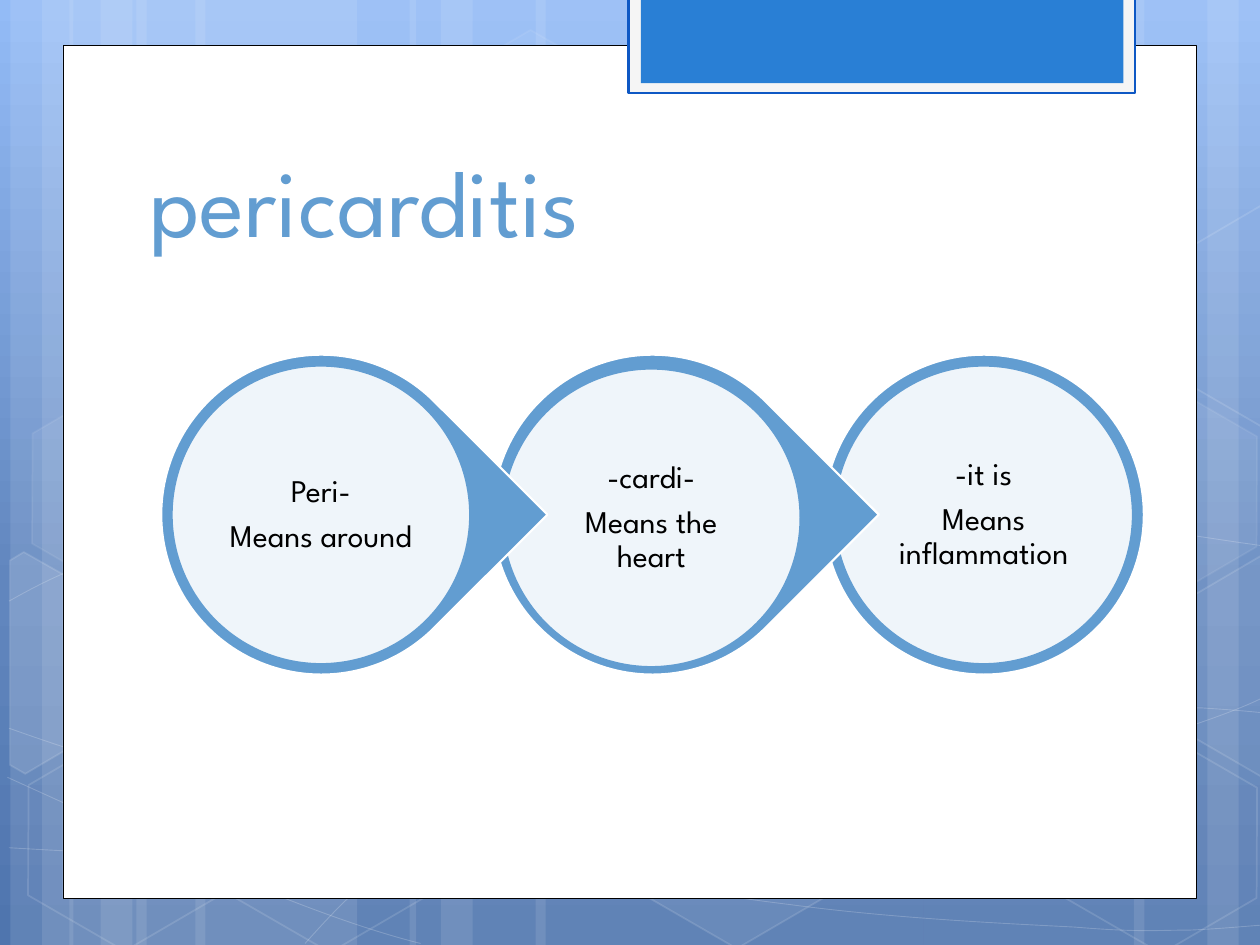
from copy import deepcopy

from lxml import etree
from pptx import Presentation
from pptx.dml.color import RGBColor
from pptx.enum.shapes import MSO_SHAPE
from pptx.enum.text import MSO_ANCHOR, PP_ALIGN
from pptx.oxml.ns import qn
from pptx.util import Cm, Pt

RECT, OVAL = MSO_SHAPE.RECTANGLE, MSO_SHAPE.OVAL
HEXAGON, DROP = MSO_SHAPE.HEXAGON, MSO_SHAPE.TEAR
MIDDLE, BOTTOM = MSO_ANCHOR.MIDDLE, MSO_ANCHOR.BOTTOM
LEFT, CENTER = PP_ALIGN.LEFT, PP_ALIGN.CENTER


class Theme:
    font = "League Spartan"
    title, body = 54, 18
    white, black, accent = "FFFFFF", "000000", "629DD1"
    tab, edge, rim = "297FD5", "0E58C4", "F5F5F5"
    sky = [(0, "93BBF6"), (0.62, "6186BE"), (1, "4F75AE")]


# All lengths are in cm.
WIDE, HIGH = 25.4, 19.05
TITLE = "pericarditis"
# Word part, meaning, offset of the pale disc inside its ring
PARTS = [
    ("Peri-", "Means around", (0.21, 0.22)),
    ("-cardi-", "Means the heart", (0.19, 0.28)),
    ("-it is", "Means inflammation", (0.21, 0.22)),
]
RING, DISC, LABEL = 6.45, 6.02, 4.32
START, STEP, TOP = 3.25, 6.68, 7.15

# Left, width
STRIPES = [
    (2.75, 4.45), (0.21, 1.27), (0.85, 2.11), (3.94, 4.45), (1.4, 1.27),
    (2.03, 2.11), (18.62, 4.45), (24.34, 1.27), (22.86, 2.11),
    (10.8, 7.82), (8.26, 1.27), (8.89, 2.11),
]
# Chains of cubic curves: a start, then two controls and an end each
CURVES = [
    [(0.18, 17.09), (1.55, 17.17), (2.92, 17.25), (4.83, 17.22),
     (6.73, 17.2), (9.09, 17.15), (11.63, 16.89), (14.17, 16.64),
     (17.78, 16.15), (20.12, 15.67), (22.43, 15.19), (24.82, 14.43),
     (25.58, 14)],
    [(0.18, 12.12), (0.91, 11.71), (1.65, 11.33), (3.07, 10.95),
     (4.52, 10.57), (6.58, 10.01), (8.81, 9.83), (11.07, 9.65),
     (13.82, 9.63), (16.61, 9.83), (19.41, 10.03), (24.05, 10.82),
     (25.58, 11.02)],
    [(0.15, 15.67), (3.23, 17.07), (6.27, 18.47), (8.48, 19.02)],
    [(0.18, 14.68), (0.97, 14.96), (1.78, 15.24), (3.25, 15.65),
     (4.72, 16.03), (6.93, 16.66), (9.07, 17.09), (11.18, 17.53),
     (13.84, 17.98), (15.95, 18.24), (18.06, 18.52), (20.32, 18.62),
     (21.67, 18.69), (22.99, 18.8), (23.34, 18.75), (24, 18.75),
     (24.66, 18.72), (25.12, 18.67), (25.58, 18.64)],
    [(6.15, 19.02), (6.6, 18.52), (7.06, 18.01), (7.67, 17.55),
     (8.28, 17.09), (9.14, 16.59), (9.86, 16.23), (10.57, 15.88),
     (11, 15.72), (11.94, 15.47), (12.85, 15.22), (14.55, 14.86),
     (15.44, 14.68), (16.36, 14.5), (16.48, 14.5), (17.27, 14.45),
     (18.06, 14.38), (19.3, 14.3), (20.17, 14.27), (21.06, 14.25),
     (22.5, 14.27), (22.5, 14.27), (23, 14.27), (23.7, 14.27),
     (24.21, 14.27), (24.66, 14.3), (25.1, 14.33), (25.55, 14.38)],
]
# Left, top, opacity of fill, opacity of line
CELLS = [
    (8.48, 0.91, 4, 8), (12.62, 14.96, 6, 12), (0.28, 15.01, 0, 12),
    (0.36, 7.92, 7, 8), (4.42, 15.04, 0, 12), (19.13, 11.51, 10, 12),
    (21.18, 15.06, 0, 12), (21.18, 7.98, 7, 8),
]
# Opacity of fill, outline of a cell cut by the slide edge
CUTS = [
    (10, [(0.2, 11.3), (0.48, 11.13), (2.44, 12.24), (2.41, 14.48),
          (0.51, 15.6), (0.2, 15.42)]),
    (4, [(23.52, 12.32), (25.43, 11.2), (25.63, 11.33), (25.63, 15.57),
         (25.45, 15.67), (23.52, 14.55)]),
    (0, [(23.52, 5.26), (25.43, 4.14), (25.65, 4.27), (25.63, 8.51),
         (25.45, 8.61), (23.52, 7.49)]),
]

deck = Presentation()
deck.slide_width, deck.slide_height = Cm(WIDE), Cm(HIGH)
slide = deck.slides.add_slide(deck.slide_layouts[6])
shapes = slide.shapes


def tint(fill, color, alpha):
    """Make a fill solid, with opacity in percent."""
    fill.solid()
    fill.fore_color.rgb = RGBColor.from_string(color)
    if alpha < 100:
        node = fill._xPr.find(qn("a:solidFill"))[0]
        etree.SubElement(node, qn("a:alpha"), val=str(alpha * 1000))


def style(shape, fill=None, alpha=100, line=None, width=1, glow=100):
    """Set fill and line; glow is the opacity of the line."""
    shape.shadow.inherit = False
    if fill and alpha:
        tint(shape.fill, fill, alpha)
    else:
        shape.fill.background()
    if line:
        shape.line.width = Pt(width)
        tint(shape.line.fill, line, glow)
    else:
        shape.line.fill.background()
    return shape


def draw(kind, x, y, w, h, **look):
    return style(shapes.add_shape(kind, Cm(x), Cm(y), Cm(w), Cm(h)), **look)


def trace(dots, close, **look):
    pen = [(Cm(x), Cm(y)) for x, y in dots]
    path = shapes.build_freeform(*pen[0])
    path.add_line_segments(pen[1:], close=close)
    return style(path.convert_to_shape(), **look)


def bend(shape):
    """Turn each three line segments of a freeform into one cubic curve."""
    lines = list(shape._element.iter(qn("a:lnTo")))
    for i in range(0, len(lines), 3):
        curve = etree.Element(qn("a:cubicBezTo"))
        lines[i].addprevious(curve)
        for line in lines[i:i + 3]:
            curve.append(line[0])
            line.getparent().remove(line)


def write(lines, x, y, w, h, size=Theme.body, color=Theme.black, align=CENTER,
          anchor=MIDDLE, pad=(0.08, 0.08), space=0.9, after=6.3):
    frame = shapes.add_textbox(Cm(x), Cm(y), Cm(w), Cm(h)).text_frame
    frame.word_wrap = True
    frame.vertical_anchor = anchor
    frame.margin_left = frame.margin_right = Cm(pad[0])
    frame.margin_top = frame.margin_bottom = Cm(pad[1])
    for i, line in enumerate(lines):
        para = frame.add_paragraph() if i else frame.paragraphs[0]
        para.alignment, para.line_spacing = align, space
        para.space_after = Pt(after)
        run = para.add_run()
        run.text = line
        run.font.name, run.font.size = Theme.font, Pt(size)
        run.font.color.rgb = RGBColor.from_string(color)


# Backdrop
back = slide.background.fill
back.gradient()
back.gradient_angle = 270
stops = slide.element.find(".//" + qn("a:gsLst"))
stops.append(deepcopy(stops[-1]))
for stop, (place, color) in zip(back.gradient_stops, Theme.sky):
    stop.position = place
    stop.color.rgb = RGBColor.from_string(color)

for x, w in STRIPES:
    draw(RECT, x, 0, w, HIGH, fill=Theme.white, alpha=10)
for dots in CURVES:
    bend(trace(dots, False, line=Theme.white, width=0.5, glow=20))
for x, y, alpha, glow in CELLS:
    cell = draw(HEXAGON, x, y, 4.45, 3.86, fill=Theme.white, alpha=alpha,
                line=Theme.white, glow=glow)
    cell.adjustments[0] = 0.285
    cell.rotation = 30
for alpha, dots in CUTS:
    trace(dots, True, fill=Theme.white, alpha=alpha, line=Theme.white, glow=12)

# Panel, tab and title
draw(RECT, 1.27, 0.91, 22.86, 17.2, fill=Theme.white, line=Theme.black, width=0.5)
draw(RECT, 12.67, -0.05, 10.21, 1.93, fill=Theme.rim, line=Theme.edge, width=1.25)
draw(RECT, 12.92, -0.05, 9.73, 1.73, fill=Theme.tab)
write([TITLE], 2.76, 2.32, 11.86, 2.97, size=Theme.title, color=Theme.accent,
      align=LEFT, anchor=BOTTOM, pad=(0.25, 0.13), space=1, after=0)

# Word parts, the last one at the back
last = len(PARTS) - 1
inset = (DISC - LABEL) / 2
for i in range(last, -1, -1):
    part, sense, (dx, dy) = PARTS[i]
    left = START + i * STEP
    ring = draw(OVAL if i == last else DROP, left, TOP, RING, RING,
                fill=Theme.accent, line=Theme.white, width=1.25)
    if i < last:
        ring.rotation = 45
    x, y = left + dx, TOP + dy
    draw(OVAL, x, y, DISC, DISC, fill=Theme.white, alpha=90,
         line=Theme.accent, width=1.25)
    write([part, sense], x + inset, y + inset, LABEL, LABEL)

deck.save("out.pptx")
